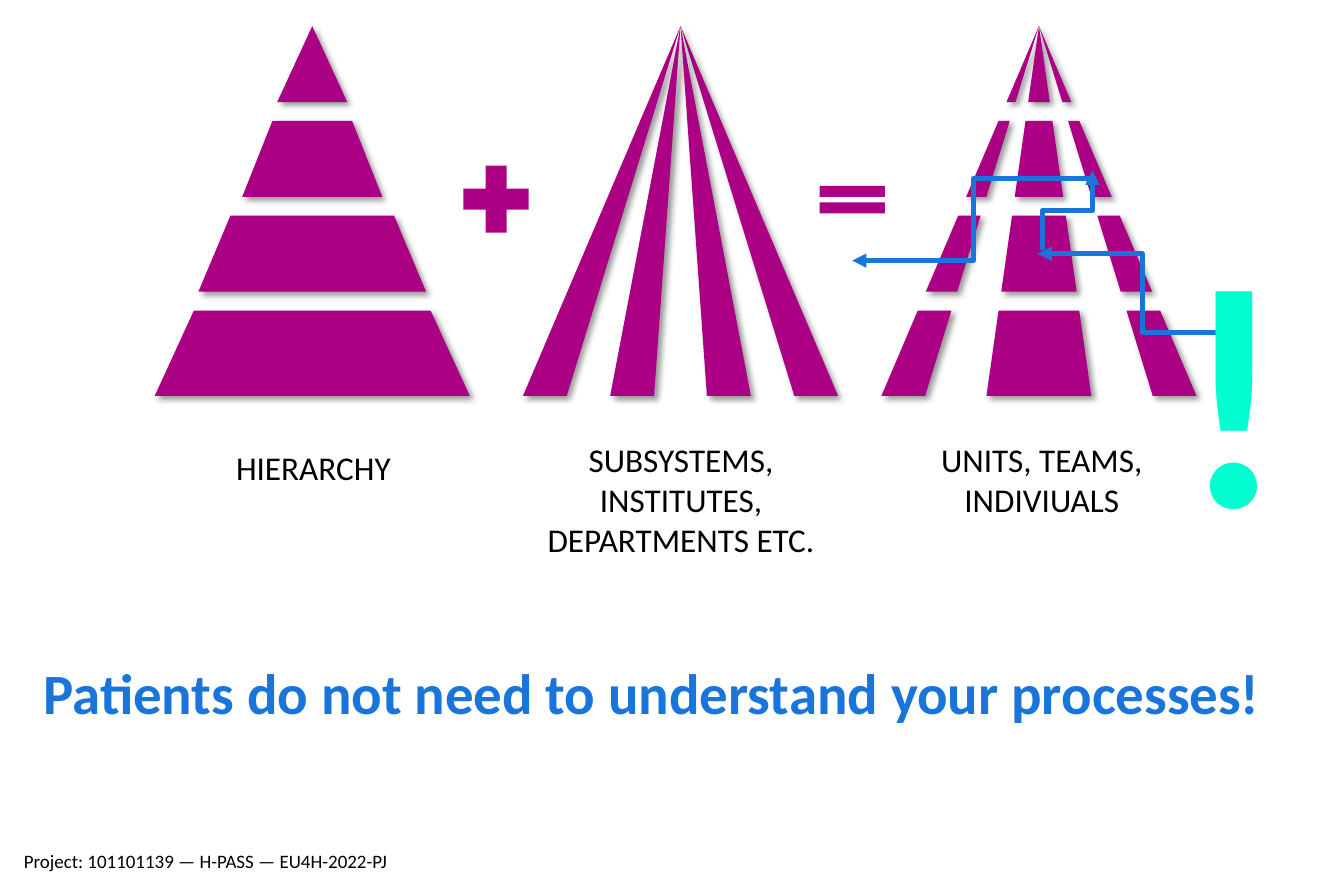
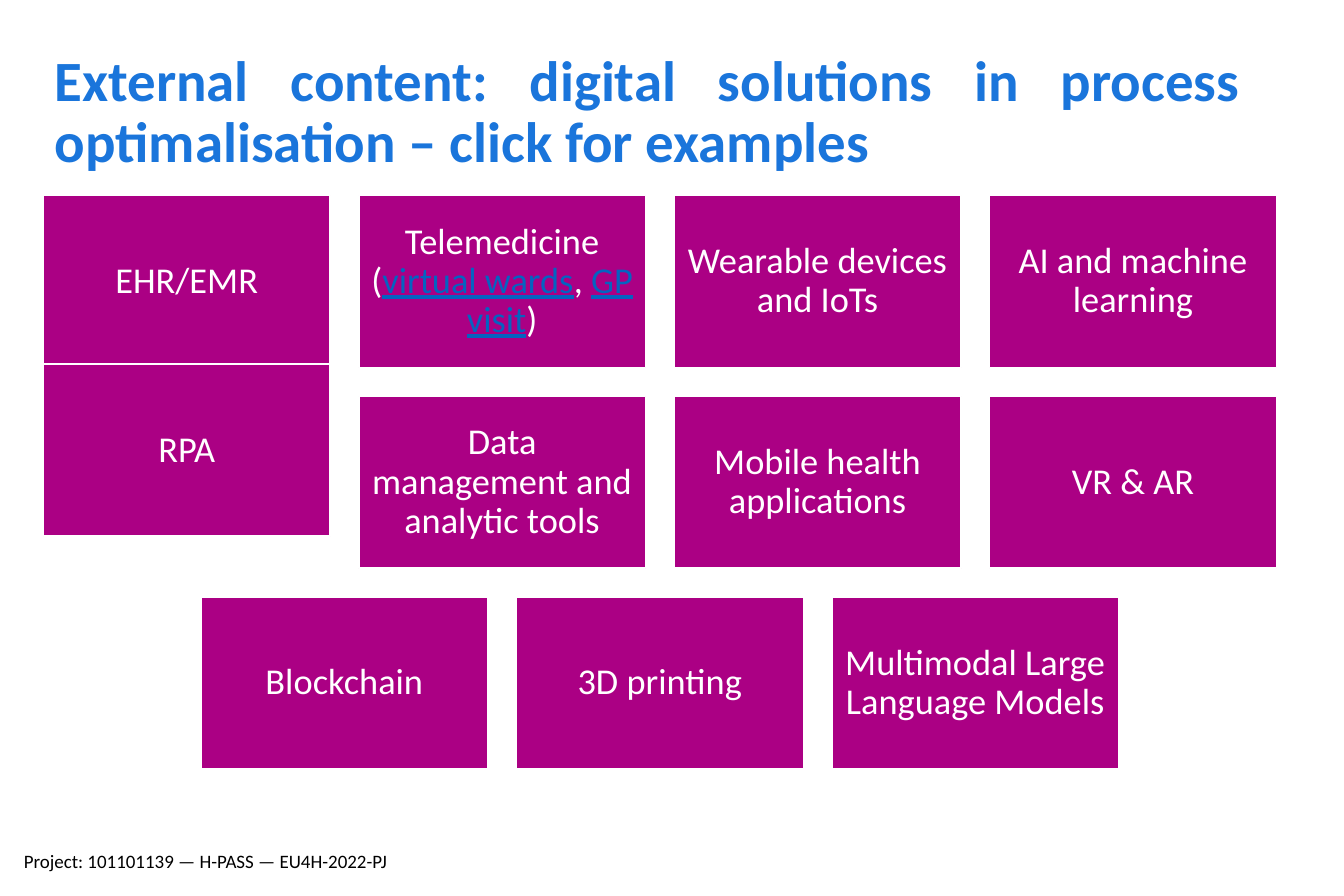
from typing import NamedTuple

from lxml.etree import SubElement
from pptx import Presentation
from pptx.dml.color import RGBColor
from pptx.enum.dml import MSO_LINE
from pptx.enum.shapes import MSO_CONNECTOR, MSO_SHAPE
from pptx.enum.text import MSO_ANCHOR, MSO_AUTO_SIZE, PP_ALIGN
from pptx.oxml.ns import qn
from pptx.util import Pt

# Shared look, all lengths in points
FONT = "Calibri"
PURPLE, BLUE, MINT = "AB0084", "1A75DB", "02FFD2"
LINK_BLUE, WHITE, BLACK = "0563C1", "FFFFFF", "000000"
FOOTER = "Project: 101101139 — H-PASS — EU4H-2022-PJ"

# Pyramid geometry
APEX_Y, BASE_Y, HALF_BASE = 16.5, 250.5, 99.7
HIERARCHY_X, SUBSYSTEMS_X, UNITS_X = 197.6, 430.6, 657.4


class Area(NamedTuple):
    left: float
    top: float
    width: float
    height: float

    def lengths(self) -> list:
        return [Pt(value) for value in self]


class Span(NamedTuple):
    text: str
    link: bool = False


class Band(NamedTuple):
    top: float
    bottom: float
    half_top: float
    half_bottom: float


class Spoke(NamedTuple):
    """Horizontal offsets from the pyramid axis at its base."""
    left: float
    right: float


class Label(NamedTuple):
    text: str
    area: Area


class Tile(NamedTuple):
    spans: list
    column: float
    row: float


BANDS = [
    Band(16.5, 64.7, 0, 22.2),
    Band(76.5, 124.5, 25.2, 44.3),
    Band(136.5, 184.5, 51.8, 72),
    Band(196.5, 250.5, 74.9, HALF_BASE),
]
SUBSYSTEM_SPOKES = [Spoke(-HALF_BASE, -72), Spoke(72, HALF_BASE), Spoke(-44.5, -16.7), Spoke(16.7, 44.5)]
UNIT_SPOKES = [Spoke(-HALF_BASE, -72), Spoke(-33.2, 33.2), Spoke(72, HALF_BASE)]
LABELS = [
    Label("HIERARCHY", Area(131.8, 283, 133, 53.3)),
    Label("SUBSYSTEMS, INSTITUTES, DEPARTMENTS ETC.", Area(338.4, 278, 185, 53.3)),
    Label("UNITS, TEAMS, INDIVIUALS", Area(572.4, 278, 173.5, 53.3)),
]

# Tile grid
TILE_WIDTH, TILE_HEIGHT = 181.5, 108.8
TILE_LEFT, TILE_TOP = 27.4, 123.8
COLUMN_STEP, ROW_STEP = 199.6, 127
TELEMEDICINE = [Span("Telemedicine ("), Span("virtual wards", True), Span(", "),
                Span("GP visit", True), Span(")")]
TILES = [
    Tile([Span("EHR/EMR")], 0, 0),
    Tile(TELEMEDICINE, 1, 0),
    Tile([Span("Wearable devices and IoTs")], 2, 0),
    Tile([Span("AI and machine learning")], 3, 0),
    Tile([Span("RPA")], 0, 0.84),
    Tile([Span("Data management and analytic tools")], 1, 1),
    Tile([Span("Mobile health applications")], 2, 1),
    Tile([Span("VR & AR")], 3, 1),
    Tile([Span("Blockchain")], 0.5, 2),
    Tile([Span("3D printing")], 1.5, 2),
    Tile([Span("Multimodal Large Language Models")], 2.5, 2),
]


def color(value: str) -> RGBColor:
    return RGBColor.from_string(value)


def write_text(box, spans, *, size: float, ink: str = BLACK, bold: bool = False,
               align=PP_ALIGN.LEFT, anchor=MSO_ANCHOR.TOP, spacing: float = 1.0,
               margin: float | None = None) -> None:
    """Fill a box with one paragraph, given as a string or a list of spans."""
    frame = box.text_frame
    frame.word_wrap = True
    frame.auto_size = MSO_AUTO_SIZE.NONE
    frame.vertical_anchor = anchor
    if margin is not None:
        frame.margin_left = frame.margin_right = Pt(margin)
        frame.margin_top = frame.margin_bottom = Pt(margin)
    para = frame.paragraphs[0]
    para.alignment = align
    para.line_spacing = spacing
    for span in [Span(spans)] if isinstance(spans, str) else spans:
        run = para.add_run()
        run.text = span.text
        run.font.name = FONT
        run.font.size = Pt(size)
        run.font.bold = bold
        run.font.underline = span.link
        run.font.color.rgb = color(LINK_BLUE if span.link else ink)


def add_text(page, text: str, area: Area, **style) -> None:
    write_text(page.shapes.add_textbox(*area.lengths()), text, **style)


def add_page(deck, title: str, area: Area, align=PP_ALIGN.LEFT):
    """Add a page with the shared title style and footer."""
    page = deck.slides.add_slide(deck.slide_layouts[5])
    box = page.shapes.title
    box.left, box.top, box.width, box.height = area.lengths()
    write_text(box, title, size=36, ink=BLUE, bold=True, align=align, spacing=0.9)
    add_text(page, FOOTER, Area(8, 534.2, 261.4, 19.4), size=12)
    return page


def paint(shape, line: str | None = None) -> None:
    shape.shadow.inherit = False
    shape.fill.solid()
    shape.fill.fore_color.rgb = color(PURPLE)
    if line:
        shape.line.color.rgb = color(line)
        shape.line.width = Pt(1)
    else:
        shape.line.fill.background()


def add_preset(page, kind, area: Area, line: str | None = None):
    shape = page.shapes.add_shape(kind, *area.lengths())
    paint(shape, line)
    return shape


def drop_shadow(shape) -> None:
    effects = shape._element.spPr.find(qn("a:effectLst"))
    shadow = SubElement(effects, qn("a:outerShdw"), blurRad=str(Pt(4)), dist=str(Pt(3)),
                        dir="2700000", algn="tl", rotWithShape="0")
    tint = SubElement(shadow, qn("a:srgbClr"), val=BLACK)
    SubElement(tint, qn("a:alpha"), val="40000")


def add_polygon(page, points: list) -> None:
    corners = [(Pt(x), Pt(y)) for x, y in points]
    builder = page.shapes.build_freeform(*corners[0], scale=1.0)
    builder.add_line_segments(corners[1:], close=True)
    shape = builder.convert_to_shape()
    paint(shape)
    drop_shadow(shape)


def add_spoke(page, center: float, spoke: Spoke, top: float, bottom: float) -> None:
    """Draw the part of a spoke between two heights, tapering to the apex."""
    upper, lower = [(y - APEX_Y) / (BASE_Y - APEX_Y) for y in (top, bottom)]
    points = [(center + spoke.left * upper, top), (center + spoke.left * lower, bottom),
              (center + spoke.right * lower, bottom)]
    if upper > 0:
        points.append((center + spoke.right * upper, top))
    add_polygon(page, points)


def add_elbow(page, start: tuple, end: tuple, vertical: bool = False) -> None:
    """Draw a bent arrow; a vertical one leaves its start up or down."""
    if vertical:
        # Endpoints before the quarter turn about their middle
        middle_x, middle_y = [(a + b) / 2 for a, b in zip(start, end)]
        start, end = [(middle_x + y - middle_y, middle_y - x + middle_x) for x, y in (start, end)]
    elbow = page.shapes.add_connector(MSO_CONNECTOR.ELBOW, *[Pt(v) for v in (*start, *end)])
    elbow.line.color.rgb = color(BLUE)
    elbow.line.width = Pt(3)
    elbow.line.dash_style = MSO_LINE.SOLID
    properties = elbow._element.spPr
    if vertical:
        properties.find(qn("a:xfrm")).set("rot", "5400000")
    SubElement(properties.find(qn("a:ln")), qn("a:tailEnd"), type="triangle")
    SubElement(properties, qn("a:effectLst"))


def build_pyramids(deck) -> None:
    page = add_page(deck, "Patients do not need to understand your processes!",
                    Area(20.2, 417.6, 809.3, 54))
    # Hierarchy: horizontal bands under a triangular tip
    tip, *lower_bands = BANDS
    drop_shadow(add_preset(page, MSO_SHAPE.ISOSCELES_TRIANGLE, Area(
        HIERARCHY_X - tip.half_bottom, tip.top, 2 * tip.half_bottom, tip.bottom - tip.top)))
    for band in lower_bands:
        add_polygon(page, [
            (HIERARCHY_X - band.half_top, band.top), (HIERARCHY_X + band.half_top, band.top),
            (HIERARCHY_X + band.half_bottom, band.bottom),
            (HIERARCHY_X - band.half_bottom, band.bottom)])
    # Subsystems: full-height spokes
    for spoke in SUBSYSTEM_SPOKES:
        add_spoke(page, SUBSYSTEMS_X, spoke, APEX_Y, BASE_Y)
    # Units: spokes cut by the bands
    for spoke in UNIT_SPOKES:
        for band in BANDS:
            add_spoke(page, UNITS_X, spoke, band.top, band.bottom)
    # Operators
    add_preset(page, MSO_SHAPE.MATH_PLUS, Area(285.8, 97.2, 56.2, 57.6))
    add_preset(page, MSO_SHAPE.MATH_EQUAL, Area(511.2, 111.6, 56.2, 29.5))
    # Patient's route
    add_elbow(page, (789, 210.2), (656.6, 160.6))
    add_elbow(page, (659.5, 158.4), (691.2, 108), vertical=True)
    add_elbow(page, (692.6, 113), (539.3, 164.9))
    add_text(page, "!", Area(740.9, 117.4, 99.4, 249.8), size=200, ink=MINT, bold=True)
    # Captions
    for label in LABELS:
        add_text(page, label.text, label.area, size=21, align=PP_ALIGN.CENTER, margin=0)


def build_solutions(deck) -> None:
    page = add_page(
        deck, "External content: digital solutions in process optimalisation – click for examples",
        Area(27.4, 29.5, 764.6, 78.5), align=PP_ALIGN.JUSTIFY)
    for tile in TILES:
        area = Area(TILE_LEFT + tile.column * COLUMN_STEP, TILE_TOP + tile.row * ROW_STEP,
                    TILE_WIDTH, TILE_HEIGHT)
        box = add_preset(page, MSO_SHAPE.RECTANGLE, area, line=WHITE)
        write_text(box, tile.spans, size=23, ink=WHITE, align=PP_ALIGN.CENTER,
                   anchor=MSO_ANCHOR.MIDDLE, spacing=0.9, margin=7.2)


def main() -> None:
    deck = Presentation()
    deck.slide_width, deck.slide_height = Pt(850.4), Pt(566.9)
    build_pyramids(deck)
    build_solutions(deck)
    deck.save("out.pptx")


if __name__ == "__main__":
    main()
